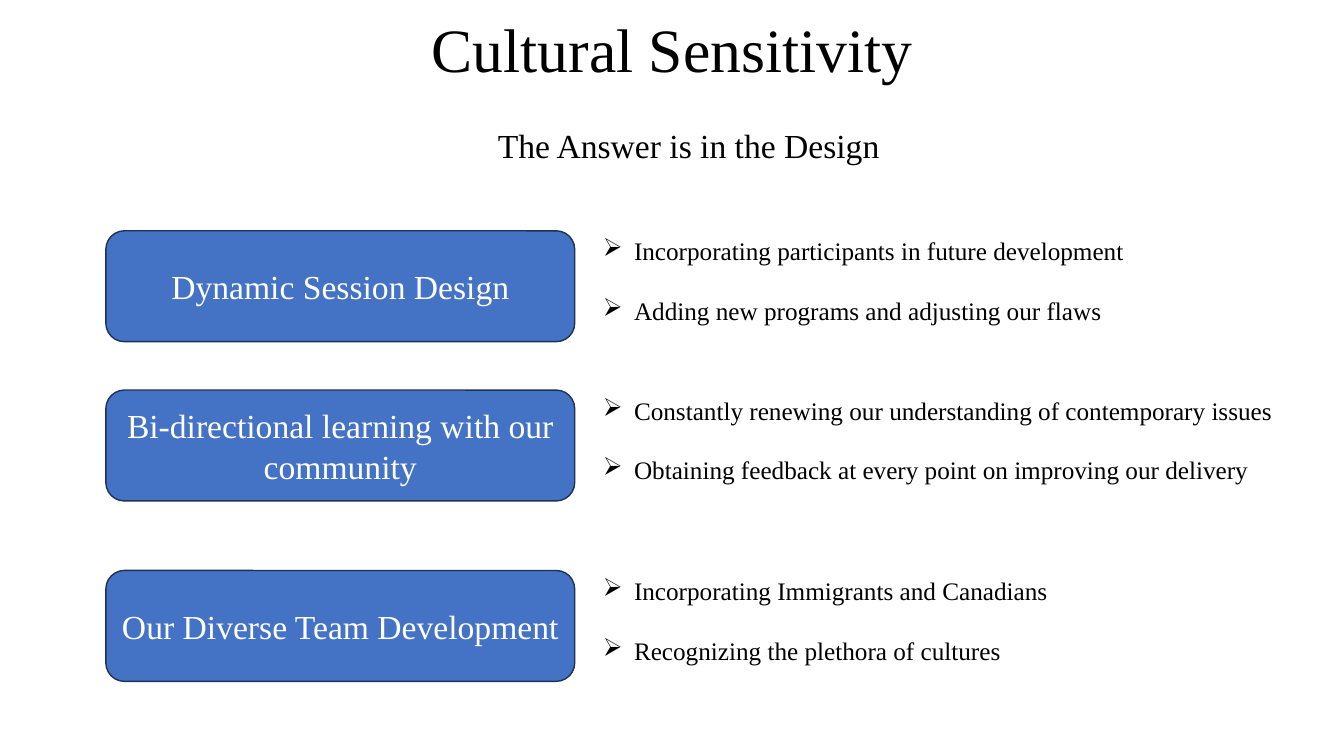
from lxml.etree import SubElement
from pptx import Presentation
from pptx.dml.color import RGBColor
from pptx.enum.shapes import MSO_SHAPE
from pptx.enum.text import MSO_ANCHOR, PP_ALIGN
from pptx.oxml.ns import qn
from pptx.util import Inches, Pt

BLACK = RGBColor(0, 0, 0)
WHITE = RGBColor(255, 255, 255)
BLUE = RGBColor(0x44, 0x72, 0xC4)
NAVY = RGBColor(0x1E, 0x32, 0x56)
FONT = "Times New Roman"
WIDE, HIGH = 13.33, 7.5
LEFT, RIGHT = 1.05, 5.88
BOX_W, BOX_H = 4.65, 1.1
LIST_W = 7.32
INDENT = Inches(0.31)
ROWS = [
    (2.29, "Dynamic Session Design",
     ["Incorporating participants in future development",
      "Adding new programs and adjusting our flaws"]),
    (3.87, "Bi-directional learning with our community",
     ["Constantly renewing our understanding of contemporary issues",
      "Obtaining feedback at every point on improving our delivery"]),
    (5.66, "Our Diverse Team Development",
     ["Incorporating Immigrants and Canadians",
      "Recognizing the plethora of cultures"]),
]


def place(x, y, w, h):
    return [Inches(v) for v in (x, y, w, h)]


def write(shape, lines, size=24, color=BLACK, align=PP_ALIGN.CENTER,
          anchor=MSO_ANCHOR.MIDDLE, space=None, gap=0, bullet=None):
    frame = shape.text_frame
    frame.word_wrap = True
    frame.vertical_anchor = anchor
    for i, line in enumerate(lines):
        para = frame.add_paragraph() if i else frame.paragraphs[0]
        para.alignment = align
        para.line_spacing = space
        if i:
            para.space_before = Pt(gap)
        if bullet:
            mark(para, bullet)
        run = para.add_run()
        run.text = line
        run.font.name = FONT
        run.font.size = Pt(size)
        run.font.color.rgb = color


def mark(para, char):
    props = para._p.get_or_add_pPr()
    props.set("marL", str(INDENT))
    props.set("indent", str(-INDENT))
    SubElement(props, qn("a:buChar")).set("char", char)


def add_title(slide, text):
    title = slide.shapes.title
    title.left, title.top, title.width, title.height = place(0.92, -0.2, 11.5, 1.45)
    write(title, [text], size=44, space=0.9)


def add_box(slide, top, text):
    box = slide.shapes.add_shape(MSO_SHAPE.ROUNDED_RECTANGLE,
                                 *place(LEFT, top, BOX_W, BOX_H))
    box.shadow.inherit = False
    box.fill.solid()
    box.fill.fore_color.rgb = BLUE
    box.line.color.rgb = NAVY
    box.line.width = Pt(1)
    write(box, [text], color=WHITE)


def add_list(slide, top, lines):
    area = slide.shapes.add_textbox(*place(RIGHT, top, LIST_W, BOX_H))
    write(area, lines, size=18, align=PP_ALIGN.JUSTIFY,
          anchor=MSO_ANCHOR.TOP, gap=21, bullet="➢")


def main():
    deck = Presentation()
    deck.slide_width, deck.slide_height = Inches(WIDE), Inches(HIGH)
    slide = deck.slides.add_slide(deck.slide_layouts.get_by_name("Title Only"))
    add_title(slide, "Cultural Sensitivity")
    motto = slide.shapes.add_textbox(*place(0.29, 0.74, 13.08, 1.45))
    write(motto, ["The Answer is in the Design"], space=0.9)
    for top, label, points in ROWS:
        add_box(slide, top, label)
        add_list(slide, top, points)
    deck.save("out.pptx")


if __name__ == "__main__":
    main()
